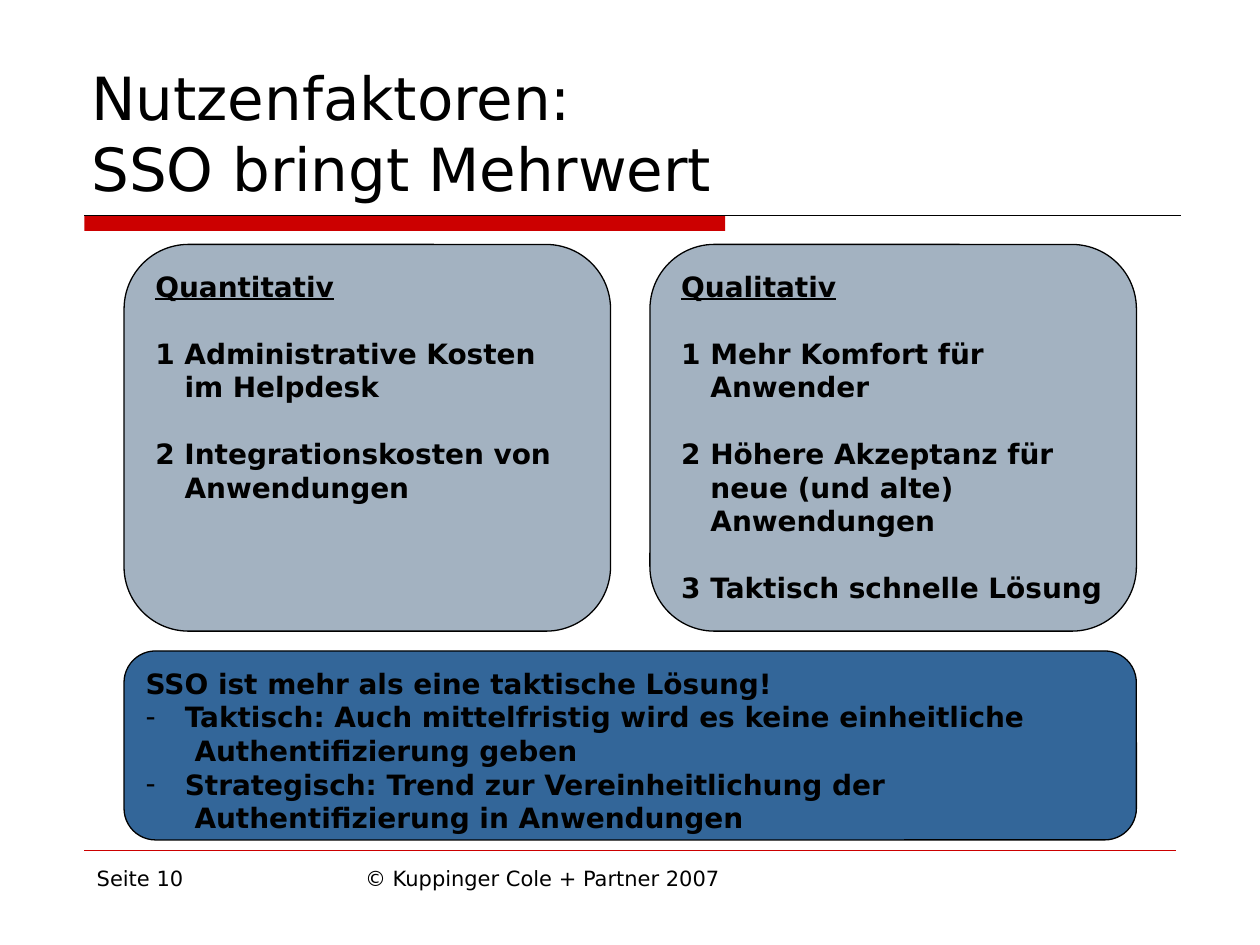
"""Build the slide on the benefits of single sign-on."""
from dataclasses import dataclass

from lxml import etree
from pptx import Presentation
from pptx import util as u
from pptx.dml.color import RGBColor
from pptx.enum import shapes, text
from pptx.oxml import ns

FONT = "DejaVu Sans"
BLACK = "000000"
RED = "CC0000"
PANEL_GREY = "A3B2C1"
PANEL_BLUE = "336699"
LEFT_EDGE = 48.2
PANEL_LEFT = 70.9
PANEL_TOP = 139.7
PANEL_WIDTH = 278
PANEL_PITCH = 300.5


@dataclass
class Box:
    left: float
    top: float
    width: float
    height: float


@dataclass
class Item:
    lines: list[str]
    underline: bool = False
    hanging: float = 0
    space_before: float = 0
    bullet: str = ""


@dataclass
class Panel:
    box: Box
    fill: str
    items: list[Item]


def color(value: str) -> RGBColor:
    """Turn a hex string into a colour."""
    return RGBColor.from_string(value)


def lengths(box: Box) -> list[u.Length]:
    """Return the four sides of a box as point lengths."""
    return [u.Pt(value) for value in (box.left, box.top, box.width, box.height)]


def add_lines(paragraph, lines: list[str], size: float, bold=False, underline=False) -> None:
    """Add one run per line, with line breaks between them."""
    for index, line in enumerate(lines):
        if index:
            paragraph.add_line_break()
        run = paragraph.add_run()
        run.text = line
        run.font.name = FONT
        run.font.size = u.Pt(size)
        run.font.bold = bold
        run.font.underline = underline
        run.font.color.rgb = color(BLACK)


def add_item(paragraph, item: Item) -> None:
    """Format a panel paragraph and add its lines."""
    paragraph.alignment = text.PP_ALIGN.LEFT
    properties = paragraph._p.get_or_add_pPr()
    if item.hanging:
        properties.set("marL", str(u.Pt(item.hanging)))
        properties.set("indent", str(-u.Pt(item.hanging)))
    if item.bullet:
        etree.SubElement(properties, ns.qn("a:buFont"), typeface=FONT)
        etree.SubElement(properties, ns.qn("a:buChar"), char=item.bullet)
    paragraph.space_before = u.Pt(item.space_before)
    add_lines(paragraph, item.lines, 16, True, item.underline)


def add_panel(slide, panel: Panel) -> None:
    """Draw a rounded panel with its text."""
    shape = slide.shapes.add_shape(
        shapes.MSO_SHAPE.ROUNDED_RECTANGLE, *lengths(panel.box))
    shape.shadow.inherit = False
    shape.adjustments[0] = 0.167
    shape.fill.solid()
    shape.fill.fore_color.rgb = color(panel.fill)
    shape.line.color.rgb = color(BLACK)
    shape.line.width = u.Pt(0.75)
    frame = shape.text_frame
    frame.word_wrap = True
    frame.margin_right = 0
    frame.vertical_anchor = text.MSO_ANCHOR.TOP
    for index, item in enumerate(panel.items):
        paragraph = frame.add_paragraph() if index else frame.paragraphs[0]
        add_item(paragraph, item)


def add_rule(slide, right: float, top: float, line_color: str, width: float) -> None:
    """Draw a horizontal rule from the left edge."""
    rule = slide.shapes.add_connector(
        shapes.MSO_CONNECTOR.STRAIGHT,
        u.Pt(LEFT_EDGE), u.Pt(top), u.Pt(right), u.Pt(top))
    rule.line.color.rgb = color(line_color)
    rule.line.width = u.Pt(width)
    etree.SubElement(rule._element.spPr, ns.qn("a:effectLst"))


def add_bar(slide, box: Box) -> None:
    """Draw the red bar below the title."""
    bar = slide.shapes.add_shape(shapes.MSO_SHAPE.RECTANGLE, *lengths(box))
    bar.shadow.inherit = False
    bar.fill.solid()
    bar.fill.fore_color.rgb = color(RED)
    bar.line.fill.background()


def add_footer(slide, box: Box, line: str, alignment: text.PP_ALIGN) -> None:
    """Add a footer text box."""
    frame = slide.shapes.add_textbox(*lengths(box)).text_frame
    frame.word_wrap = True
    frame.paragraphs[0].alignment = alignment
    add_lines(frame.paragraphs[0], [line], 12)


def set_title(slide, box: Box, lines: list[str]) -> None:
    """Place the title placeholder and fill it."""
    title = slide.shapes.title
    title.left, title.top, title.width, title.height = lengths(box)
    frame = title.text_frame
    frame.word_wrap = True
    frame.auto_size = text.MSO_AUTO_SIZE.NONE
    frame.vertical_anchor = text.MSO_ANCHOR.BOTTOM
    frame.paragraphs[0].alignment = text.PP_ALIGN.LEFT
    add_lines(frame.paragraphs[0], lines, 34)


def column_panel(column: int, heading: str, factors: list[list[str]]) -> Panel:
    """Describe a grey column with a heading and numbered factors."""
    items = [Item([heading], underline=True)]
    for number, (first, *rest) in enumerate(factors, 1):
        items.append(Item([f"{number} {first}", *rest], hanging=16.7, space_before=19))
    left = PANEL_LEFT + column * PANEL_PITCH
    return Panel(Box(left, PANEL_TOP, PANEL_WIDTH, 221), PANEL_GREY, items)


def main() -> None:
    """Build and save the slide."""
    presentation = Presentation()
    presentation.slide_width, presentation.slide_height = u.Pt(720), u.Pt(540)
    slide = presentation.slides.add_slide(presentation.slide_layouts[5])
    set_title(slide, Box(45, 24, 630, 96), ["Nutzenfaktoren:", "SSO bringt Mehrwert"])
    add_bar(slide, Box(LEFT_EDGE, 123.1, 366.3, 8.9))
    add_rule(slide, 674.8, 123.1, BLACK, 0.5)
    add_rule(slide, 672, 486, RED, 0.25)
    add_footer(slide, Box(196, 491, 228, 37.5),
               "© Kuppinger Cole + Partner 2007", text.PP_ALIGN.CENTER)
    add_footer(slide, Box(LEFT_EDGE, 491, 156, 37.5), "Seite 10", text.PP_ALIGN.LEFT)
    conclusions = [
        ["Taktisch: Auch mittelfristig wird es keine einheitliche",
         " Authentifizierung geben"],
        ["Strategisch: Trend zur Vereinheitlichung der",
         " Authentifizierung in Anwendungen"],
    ]
    panels = [
        column_panel(0, "Quantitativ", [
            ["Administrative Kosten", "im Helpdesk"],
            ["Integrationskosten von", "Anwendungen"]]),
        column_panel(1, "Qualitativ", [
            ["Mehr Komfort für", "Anwender"],
            ["Höhere Akzeptanz für", "neue (und alte)", "Anwendungen"],
            ["Taktisch schnelle Lösung"]]),
        Panel(Box(PANEL_LEFT, 372, PANEL_PITCH + PANEL_WIDTH, 108), PANEL_BLUE, [
            Item(["SSO ist mehr als eine taktische Lösung!"]),
            *(Item(lines, hanging=22.4, bullet="-") for lines in conclusions)]),
    ]
    for panel in panels:
        add_panel(slide, panel)
    presentation.save("out.pptx")


if __name__ == "__main__":
    main()
